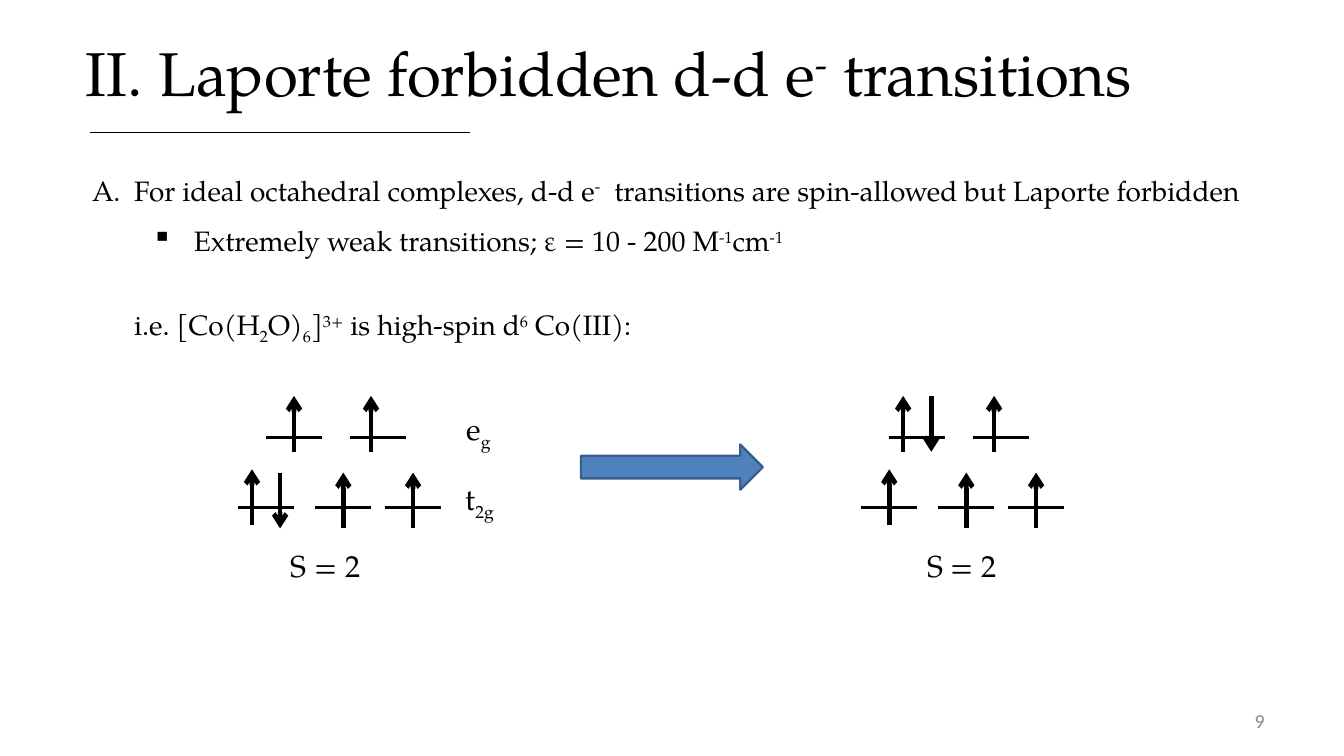
from dataclasses import dataclass

from lxml.etree import SubElement
from pptx import Presentation
from pptx.dml.color import RGBColor
from pptx.enum.shapes import MSO_CONNECTOR as Connector
from pptx.enum.shapes import MSO_SHAPE as Shape
from pptx.enum.text import MSO_ANCHOR as Anchor
from pptx.enum.text import PP_ALIGN as Align
from pptx.oxml.ns import qn
from pptx.util import Cm, Pt

COLORS = {"ink": "000000", "number": "8C8C8C", "arrow": "4F81BD", "arrow_line": "3A5F8C"}
SERIF = "TeX Gyre Pagella"
SUPER, SUB = 30000, -25000
BAR_WIDTH = SPIN_LENGTH = 1.69
T2G_Y, EG_Y = 15.35, 13.23
T2G_BARS, EG_BARS = (0, 2.33, 4.45), (0.85, 3.39)
FIRST_T2G_TOP, T2G_TOP, EG_TOP = 14.19, 14.29, 11.97


@dataclass(frozen=True)
class Span:
    text: str
    baseline: int = 0


@dataclass(frozen=True)
class Line:
    spans: tuple[Span, ...]
    margin: float = 0
    indent: float = 0
    space_before: float = 0
    bullet: tuple[str, str, str] | None = None


@dataclass(frozen=True)
class TextBox:
    left: float
    top: float
    width: float
    height: float
    size: float
    lines: tuple[Line, ...]
    align: Align = Align.LEFT
    wrap: bool = True
    font: str = SERIF
    color: str = "ink"
    anchor: Anchor = Anchor.TOP


@dataclass(frozen=True)
class Spin:
    x: float
    top: float
    up: bool = True


@dataclass(frozen=True)
class Diagram:
    left: float
    spins: tuple[Spin, ...]


def line_of(*spans: str | Span, **layout) -> Line:
    return Line(tuple(Span(s) if isinstance(s, str) else s for s in spans), **layout)


TEXT_BOXES = (
    TextBox(29.13, 21.18, 9.47, 1.22, 17, (line_of("9"),), Align.RIGHT,
            font="Calibri", color="number", anchor=Anchor.MIDDLE),
    TextBox(2.34, 0.91, 38.3, 2.13, 53, (
        line_of("II. Laporte forbidden d-d e", Span("-", SUPER), " transitions"),)),
    TextBox(2.54, 5.11, 35.36, 8.46, 24, (
        line_of("For ideal octahedral complexes, d-d e", Span("-", SUPER),
                "  transitions are spin-allowed but Laporte forbidden",
                margin=1.27, indent=-1.27, bullet=("a:buAutoNum", "type", "alphaUcPeriod")),
        line_of("Extremely weak transitions; ε = 10 - 200 M", Span("-1", SUPER),
                "cm", Span("-1", SUPER), margin=3.07, indent=-1.27,
                space_before=14.4, bullet=("a:buChar", "char", "▪")),
        line_of("i.e. [Co(H", Span("2", SUB), "O)", Span("6", SUB), "]",
                Span("3+", SUPER), " is high-spin d", Span("6", SUPER), " Co(III):",
                margin=1.27, space_before=43.2))),
    TextBox(2.34, 16.41, 15.01, 1.37, 26, (line_of("S = 2"),), Align.CENTER),
    TextBox(21.59, 16.41, 15.01, 1.37, 26, (line_of("S = 2"),), Align.CENTER),
    TextBox(13.77, 14.4, 1.47, 1.37, 26, (line_of("t", Span("2g", SUB)),), Align.CENTER, False),
    TextBox(13.82, 12.29, 1.3, 1.37, 26, (line_of("e", Span("g", SUB)),), Align.CENTER, False),
)

DIAGRAMS = (
    Diagram(7.2, (
        Spin(0.42, FIRST_T2G_TOP), Spin(1.27, T2G_TOP, False),
        Spin(3.18, T2G_TOP), Spin(5.29, T2G_TOP),
        Spin(1.69, EG_TOP), Spin(4.02, EG_TOP))),
    Diagram(26.04, (
        Spin(0.85, FIRST_T2G_TOP), Spin(3.18, T2G_TOP), Spin(5.29, T2G_TOP),
        Spin(1.27, EG_TOP), Spin(2.12, EG_TOP, False), Spin(4.02, EG_TOP))),
)


def color_of(name: str) -> RGBColor:
    return RGBColor.from_string(COLORS[name])


def add_text(slide, box: TextBox) -> None:
    shape = slide.shapes.add_textbox(Cm(box.left), Cm(box.top), Cm(box.width), Cm(box.height))
    frame = shape.text_frame
    frame.word_wrap = box.wrap
    frame.vertical_anchor = box.anchor
    if box.color == "number":
        frame.margin_left = frame.margin_right = Cm(0.36)
    for index, line in enumerate(box.lines):
        paragraph = frame.add_paragraph() if index else frame.paragraphs[0]
        paragraph.alignment = box.align
        paragraph.space_before = Pt(line.space_before)
        properties = paragraph._p.get_or_add_pPr()
        properties.set("marL", str(Cm(line.margin)))
        properties.set("indent", str(Cm(line.indent)))
        if line.bullet:
            tag, attribute, value = line.bullet
            SubElement(properties, qn(tag)).set(attribute, value)
        for span in line.spans:
            run = paragraph.add_run()
            run.text = span.text
            run.font.name = box.font
            run.font.size = Pt(box.size)
            run.font.color.rgb = color_of(box.color)
            if span.baseline:
                run._r.get_or_add_rPr().set("baseline", str(span.baseline))


def add_line(slide, x1: float, y1: float, x2: float, y2: float,
             width: float, arrow: bool = False) -> None:
    connector = slide.shapes.add_connector(Connector.STRAIGHT, Cm(x1), Cm(y1), Cm(x2), Cm(y2))
    connector.line.width = Pt(width)
    connector.line.color.rgb = color_of("ink")
    if arrow:
        SubElement(connector.line._get_or_add_ln(), qn("a:tailEnd")).set("type", "arrow")
    SubElement(connector._element.spPr, qn("a:effectLst"))


def add_diagram(slide, diagram: Diagram) -> None:
    for y, bars in ((T2G_Y, T2G_BARS), (EG_Y, EG_BARS)):
        for bar in bars:
            x = diagram.left + bar
            add_line(slide, x, y, x + BAR_WIDTH, y, 2)
    for spin in diagram.spins:
        x = diagram.left + spin.x
        top, bottom = spin.top, spin.top + SPIN_LENGTH
        start, end = (bottom, top) if spin.up else (top, bottom)
        add_line(slide, x, start, x, end, 4, arrow=True)


def add_transition_arrow(slide) -> None:
    shape = slide.shapes.add_shape(Shape.RIGHT_ARROW, Cm(17.57), Cm(13.44), Cm(5.5), Cm(1.37))
    shape.shadow.inherit = False
    shape.fill.solid()
    shape.fill.fore_color.rgb = color_of("arrow")
    shape.line.color.rgb = color_of("arrow_line")
    shape.line.width = Pt(2)


def main() -> None:
    presentation = Presentation()
    presentation.slide_width, presentation.slide_height = Cm(40.64), Cm(22.86)
    slide = presentation.slides.add_slide(presentation.slide_layouts[6])
    for box in TEXT_BOXES:
        add_text(slide, box)
    add_line(slide, 2.72, 4.01, 14.22, 4.01, 1.5)
    for diagram in DIAGRAMS:
        add_diagram(slide, diagram)
    add_transition_arrow(slide)
    presentation.save("out.pptx")


if __name__ == "__main__":
    main()
